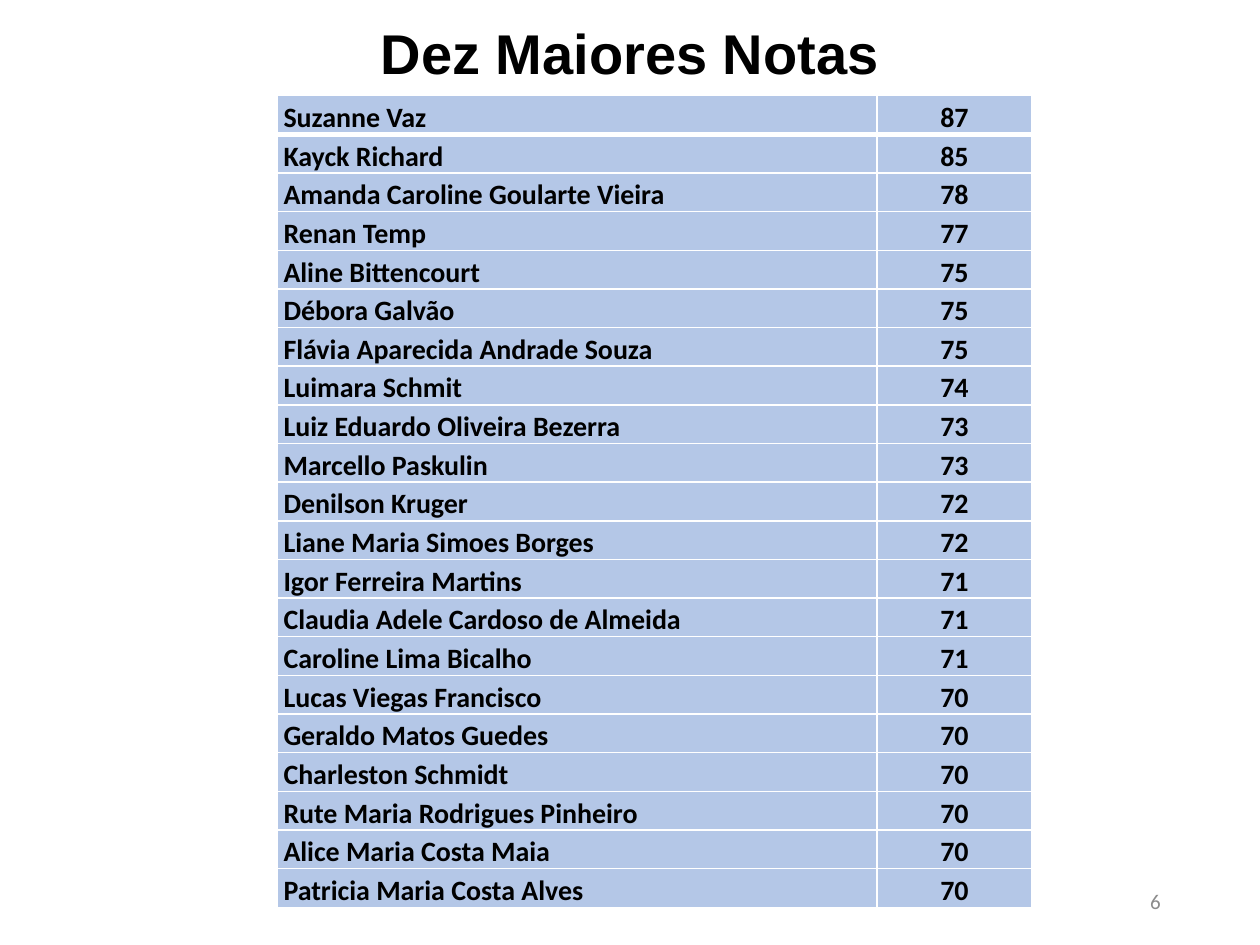
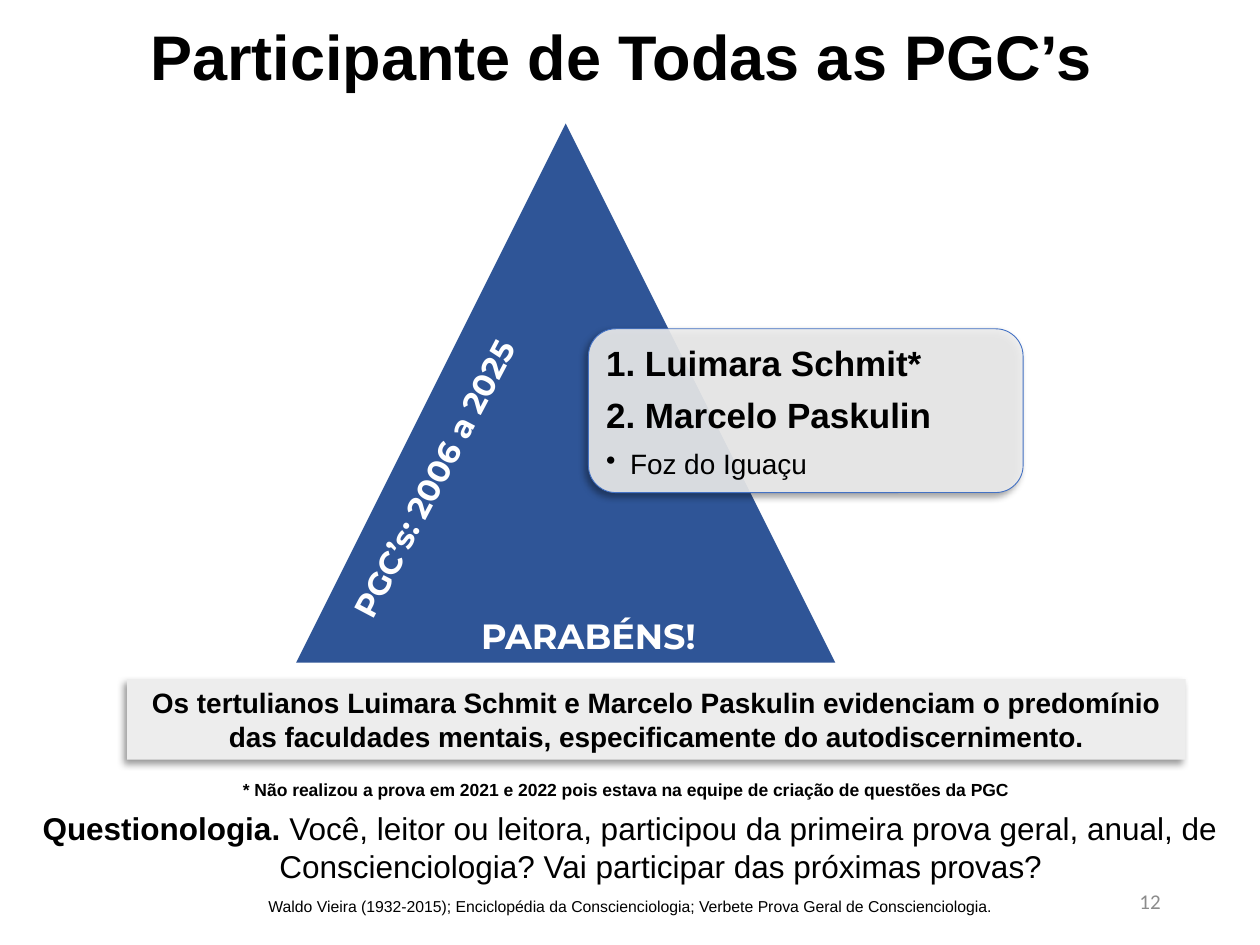
from dataclasses import dataclass

from pptx import Presentation
from pptx import util as u
from pptx.dml.color import RGBColor
from pptx.enum import shapes, text
from pptx.oxml.ns import qn
from pptx.oxml.xmlchemy import OxmlElement

ALIGN = text.PP_ALIGN
ANCHOR = text.MSO_ANCHOR
SHAPE = shapes.MSO_SHAPE


@dataclass(frozen=True)
class Theme:
    black: str = "000000"
    white: str = "FFFFFF"
    gray: str = "8C8C8C"
    panel: str = "EDEDED"
    table_fill: str = "B4C7E7"
    triangle: str = "2F5597"
    outline: str = "4472C4"
    body_font: str = "Arial"
    table_font: str = "Calibri"
    label_font: str = "Montserrat"
    title_large: int = 36
    title: int = 32
    heading: int = 20
    body: int = 18
    detail: int = 16
    number: int = 12
    note: int = 10
    source: int = 9


THEME = Theme()


@dataclass(frozen=True)
class Run:
    words: str
    size: int
    bold: bool = False
    font: str = THEME.body_font
    color: str = THEME.black


@dataclass(frozen=True)
class Line:
    runs: tuple
    align: int = ALIGN.CENTER
    spacing: float = 1.0
    before: float = 0
    after: float = 0
    margin: float = 0
    bullet: str = ""


def add_node(parent, tag, **attributes):
    node = OxmlElement(tag)
    for name, value in attributes.items():
        node.set(name, str(value))
    parent.append(node)
    return node


class Deck:
    def __init__(self, theme):
        self.theme = theme
        self.presentation = Presentation()
        self.presentation.slide_width = u.Inches(10)
        self.presentation.slide_height = u.Inches(7.5)
        self.slide = None

    def new_slide(self, title, size, center, number):
        self.slide = self.presentation.slides.add_slide(self.presentation.slide_layouts[6])
        width = 9.5
        self.text((center - width / 2, 0.16, width, 0.78),
                  [Line((Run(title, size, True),), spacing=0.9)])
        page = Run(str(number), self.theme.number, False, self.theme.table_font, self.theme.gray)
        self.text((7.06, 6.95, 2.25, 0.4), [Line((page,), ALIGN.RIGHT)], ANCHOR.MIDDLE)

    def fill_frame(self, frame, lines):
        for index, line in enumerate(lines):
            paragraph = frame.add_paragraph() if index else frame.paragraphs[0]
            paragraph.alignment = line.align
            paragraph.line_spacing = line.spacing
            paragraph.space_before = u.Pt(line.before)
            paragraph.space_after = u.Pt(line.after)
            if line.margin:
                properties = paragraph._p.get_or_add_pPr()
                properties.set("marL", str(u.Inches(line.margin)))
                if line.bullet:
                    properties.set("indent", str(-u.Inches(line.margin)))
                    add_node(properties, "a:buChar", char=line.bullet)
            for item in line.runs:
                run = paragraph.add_run()
                run.text = item.words
                run.font.size = u.Pt(item.size)
                run.font.bold = item.bold
                run.font.name = item.font
                run.font.color.rgb = RGBColor.from_string(item.color)

    def text(self, box, lines, anchor=ANCHOR.TOP, wrap=True, rotation=0):
        shape = self.slide.shapes.add_textbox(*map(u.Inches, box))
        shape.rotation = rotation
        frame = shape.text_frame
        frame.word_wrap = wrap
        frame.vertical_anchor = anchor
        self.fill_frame(frame, lines)
        return shape

    def shape(self, kind, box, color, opacity=100, outline=None, shadow=False, lines=()):
        shape = self.slide.shapes.add_shape(kind, *map(u.Inches, box))
        shape.fill.solid()
        shape.fill.fore_color.rgb = RGBColor.from_string(color)
        properties = shape.element.spPr
        if opacity < 100:
            fill = properties.find(".//" + qn("a:srgbClr"))
            add_node(fill, "a:alpha", val=opacity * 1000)
        if outline:
            shape.line.color.rgb = RGBColor.from_string(outline)
            shape.line.width = u.Pt(0.5)
        else:
            shape.line.fill.background()
        shape.shadow.inherit = False
        if shadow:
            outer = add_node(properties.find(qn("a:effectLst")), "a:outerShdw",
                             blurRad=u.Pt(4), dist=u.Pt(3), dir=135 * 60000,
                             algn="ctr", rotWithShape=0)
            shade = add_node(outer, "a:srgbClr", val=self.theme.black)
            add_node(shade, "a:alpha", val=40000)
        shape.text_frame.word_wrap = True
        shape.text_frame.vertical_anchor = ANCHOR.MIDDLE
        self.fill_frame(shape.text_frame, lines)

    def cell(self, cell, words, align, top, bottom):
        properties = cell._tc.get_or_add_tcPr()
        for side, width in (("L", 1), ("R", 1), ("T", top), ("B", bottom)):
            border = add_node(properties, f"a:ln{side}", w=u.Pt(width))
            add_node(add_node(border, "a:solidFill"), "a:srgbClr", val=self.theme.white)
        cell.fill.solid()
        cell.fill.fore_color.rgb = RGBColor.from_string(self.theme.table_fill)
        cell.margin_left = cell.margin_right = u.Inches(0.05)
        cell.margin_top = cell.margin_bottom = 0
        cell.vertical_anchor = ANCHOR.BOTTOM
        run = Run(words, self.theme.detail, True, self.theme.table_font)
        self.fill_frame(cell.text_frame, [Line((run,), align, 1.15, 2, 2)])

    def table(self, box, widths, rows):
        frame = self.slide.shapes.add_table(len(rows), len(widths), *map(u.Inches, box))
        table = frame.table
        table.first_row = table.horz_banding = False
        for column, width in zip(table.columns, widths):
            column.width = u.Inches(width)
        for index, values in enumerate(rows):
            top = 3 if index == 1 else 1
            bottom = 3 if index == 0 else 1
            for column, align in enumerate((ALIGN.LEFT, ALIGN.CENTER)):
                self.cell(table.cell(index, column), str(values[column]), align, top, bottom)


GRADES = [
    ("Suzanne Vaz", 87),
    ("Kayck Richard", 85),
    ("Amanda Caroline Goularte Vieira", 78),
    ("Renan Temp", 77),
    ("Aline Bittencourt", 75),
    ("Débora Galvão", 75),
    ("Flávia Aparecida Andrade Souza", 75),
    ("Luimara Schmit", 74),
    ("Luiz Eduardo Oliveira Bezerra", 73),
    ("Marcello Paskulin", 73),
    ("Denilson Kruger", 72),
    ("Liane Maria Simoes Borges", 72),
    ("Igor Ferreira Martins", 71),
    ("Claudia Adele Cardoso de Almeida", 71),
    ("Caroline Lima Bicalho", 71),
    ("Lucas Viegas Francisco", 70),
    ("Geraldo Matos Guedes", 70),
    ("Charleston Schmidt", 70),
    ("Rute Maria Rodrigues Pinheiro", 70),
    ("Alice Maria Costa Maia", 70),
    ("Patricia Maria Costa Alves", 70),
]


def build_grades(deck):
    deck.new_slide("Dez Maiores Notas", THEME.title, 5, 6)
    deck.table((2.2, 0.76, 5.99, 6.25), (4.76, 1.23), GRADES)


def build_participants(deck):
    deck.new_slide("Participante de Todas as PGC’s", THEME.title_large, 4.93, 12)
    deck.shape(SHAPE.ISOSCELES_TRIANGLE, (2.35, 0.98, 4.28, 4.28), THEME.triangle)
    deck.shape(SHAPE.ROUNDED_RECTANGLE, (4.67, 2.61, 3.45, 1.3), THEME.panel,
               opacity=90, outline=THEME.outline, shadow=True)

    people = [Line((Run(name, THEME.heading, True),), ALIGN.LEFT, 0.9, after=8)
              for name in ("1. Luimara Schmit*", "2. Marcelo Paskulin")]
    city = Line((Run("Foz do Iguaçu", THEME.detail),), ALIGN.LEFT, 0.9,
                after=3, margin=0.19, bullet="•")
    card = deck.text((4.73, 2.67, 3.32, 1.18), people + [city])
    card.text_frame.margin_left = card.text_frame.margin_top = u.Inches(0.08)

    for words, size, box, rotation in (
        ("PARABÉNS!", THEME.heading, (3.68, 4.83, 1.98, 0.44), 0),
        ("PGC’s: 2006 a 2025", THEME.body, (1.97, 3.6, 2.94, 0.4), 297.8),
    ):
        label = Run(words, size, True, THEME.label_font, THEME.white)
        deck.text(box, [Line((label,))], wrap=False, rotation=rotation)

    deck.text((0, 6.37, 10, 0.71), [
        Line((Run("Questionologia. ", THEME.body, True),
              Run("Você, leitor ou leitora, participou da primeira prova geral, anual, de",
                  THEME.body))),
        Line((Run("Conscienciologia? Vai participar das próximas provas?", THEME.body),),
             margin=0.49),
    ])
    deck.text((0, 7.07, 10, 0.25), [Line((Run(
        "Waldo Vieira (1932-2015); Enciclopédia da Conscienciologia; "
        "Verbete Prova Geral de Conscienciologia.", THEME.source),))])
    deck.shape(SHAPE.RECTANGLE, (1.01, 5.39, 8.4, 0.64), THEME.panel, shadow=True,
               lines=[Line((Run(
                   "Os tertulianos Luimara Schmit e Marcelo Paskulin evidenciam o predomínio "
                   "das faculdades mentais, especificamente do autodiscernimento.",
                   THEME.detail, True),))])
    deck.text((0, 6.13, 9.93, 0.27), [Line((Run(
        "* Não realizou a prova em 2021 e 2022 pois estava na equipe de criação "
        "de questões da PGC", THEME.note, True),))])


def main():
    deck = Deck(THEME)
    build_grades(deck)
    build_participants(deck)
    deck.presentation.save("out.pptx")


if __name__ == "__main__":
    main()
